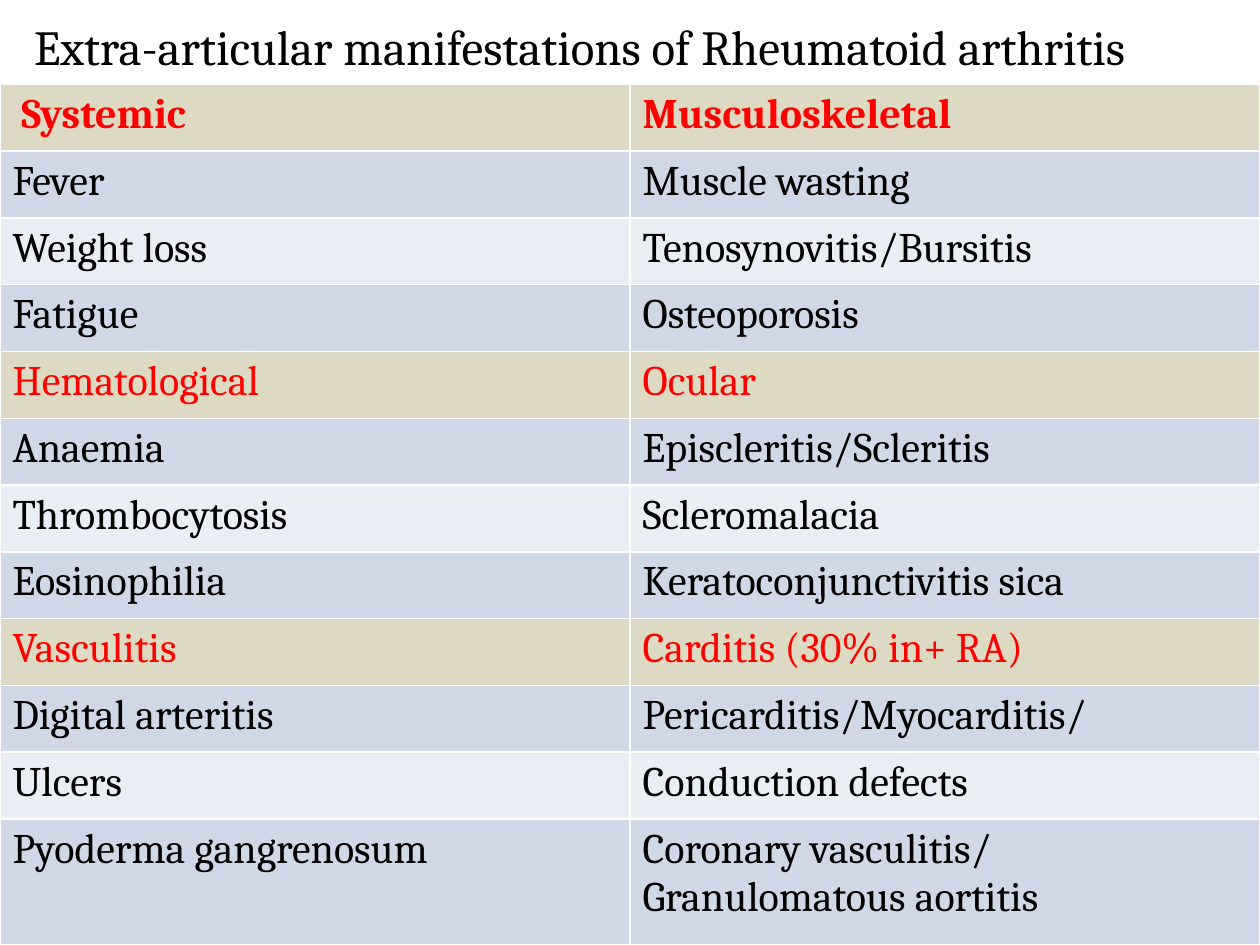
"""Build a slide that tables the extra-articular manifestations of rheumatoid arthritis."""
from dataclasses import dataclass

from pptx import Presentation
from pptx import util as u
from pptx.dml.color import RGBColor
from pptx.enum import text
from pptx.table import Table
from pptx.text.text import Font

WIDE, HIGH = u.Inches(10), u.Inches(7.5)
FACE = "Cambria"
HUES = {"ink": "000000", "red": "FF0000", "tan": "DDD9C3",
        "blue": "D0D8E8", "pale": "E9EDF4"}
BANDS = ("tan", "blue", "pale", "blue")


@dataclass
class Group:
    head: str
    items: tuple[str, str, str]


COLUMNS = (
    (Group("Systemic", ("Fever", "Weight loss", "Fatigue")),
     Group("Hematological", ("Anaemia", "Thrombocytosis", "Eosinophilia")),
     Group("Vasculitis", ("Digital arteritis", "Ulcers", "Pyoderma gangrenosum"))),
    (Group("Musculoskeletal", ("Muscle wasting", "Tenosynovitis/Bursitis", "Osteoporosis")),
     Group("Ocular", ("Episcleritis/Scleritis", "Scleromalacia", "Keratoconjunctivitis sica")),
     Group("Carditis (30% in+ RA)",
           ("Pericarditis/Myocarditis/", "Conduction defects",
            "Coronary vasculitis/ Granulomatous aortitis"))),
)


def tint(name: str) -> RGBColor:
    """Return the named colour."""
    return RGBColor.from_string(HUES[name])


def style(font: Font, size: int, hue: str, bold: bool = False) -> None:
    """Set the face, size, colour and weight of a font."""
    font.name, font.size, font.bold = FACE, u.Pt(size), bold
    font.color.rgb = tint(hue)


def fill_column(table: Table, col: int, groups: tuple[Group, ...]) -> None:
    """Write the groups down one column, each head on a tan band."""
    lines = [line for group in groups for line in (group.head, *group.items)]
    for row, line in enumerate(lines):
        cell = table.cell(row, col)
        band = BANDS[row % len(BANDS)]
        cell.fill.solid()
        cell.fill.fore_color.rgb = tint(band)
        cell.text = line
        style(cell.text_frame.paragraphs[0].font, 24,
              "red" if band == "tan" else "ink", bold=row == 0)


def main() -> None:
    """Build and save the slide."""
    deck = Presentation()
    deck.slide_width, deck.slide_height = WIDE, HIGH
    slide = deck.slides.add_slide(deck.slide_layouts[5])

    top, step = u.Inches(0.67), u.Inches(0.53)
    count = sum(1 + len(group.items) for group in COLUMNS[0])
    grid = slide.shapes.add_table(count, len(COLUMNS), 0, top, WIDE, HIGH - top)
    table = grid.table
    for row in table.rows:
        row.height = step
    table.rows[count - 1].height = HIGH - top - step * (count - 1)
    for col, groups in enumerate(COLUMNS):
        fill_column(table, col, groups)
    table.cell(0, 0).margin_left = u.Inches(0.17)

    title = slide.shapes.title
    title.left, title.top = u.Inches(0.17), u.Inches(0.08)
    title.width, title.height = u.Inches(9.33), u.Inches(0.59)
    frame = title.text_frame
    frame.text = "Extra-articular manifestations of Rheumatoid arthritis"
    frame.vertical_anchor = text.MSO_ANCHOR.TOP
    frame.auto_size = text.MSO_AUTO_SIZE.NONE
    frame.paragraphs[0].alignment = text.PP_ALIGN.LEFT
    style(frame.paragraphs[0].font, 28, "ink")

    deck.save("out.pptx")


if __name__ == "__main__":
    main()
